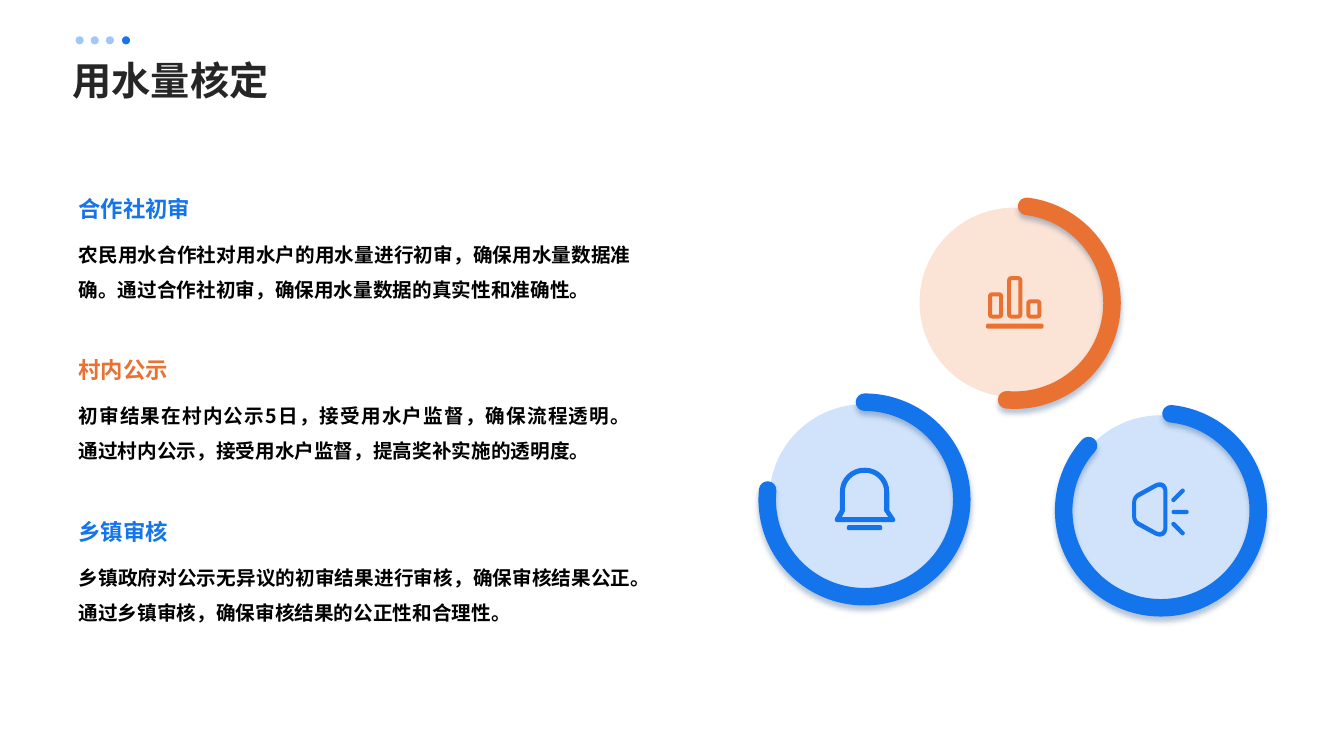
from dataclasses import dataclass
from typing import NamedTuple

from lxml import etree
from pptx import Presentation, util as u
from pptx.dml import color as c
from pptx.enum import shapes, text
from pptx.oxml import ns
from pptx.shapes import autoshape, shapetree
from pptx.slide import Slide

PX = 9144
BEND = 0.55
STEPS = 8


@dataclass(frozen=True)
class Theme:
    font: str = "Noto Sans CJK SC"
    blue: str = "1474EC"
    orange: str = "E97132"
    sky: str = "D0E3FB"
    peach: str = "FBE3D6"
    shade: str = "0A3A76"
    ink: str = "262626"
    black: str = "000000"
    title: int = 28
    head: int = 16
    body: int = 14
    ring: float = 12.5


class Node(NamedTuple):
    x: int
    y: int
    r: int = 0


Path = list[Node]


@dataclass(frozen=True)
class Item:
    top: int
    head: str
    body: str
    hue: str


@dataclass(frozen=True)
class Dial:
    x: int
    y: int
    start: float
    end: float
    hue: str
    tint: str
    icon: list[Path]


T = Theme()


def box(x: int, y: int, w: int, h: int, r: int = 0) -> Path:
    return [Node(x, y, r), Node(x + w, y, r), Node(x + w, y + h, r), Node(x, y + h, r)]


def path(*nodes: tuple[int, ...]) -> Path:
    return [Node(*node) for node in nodes]


BARS = [box(978, 321, 57, 5, 2)]
for col, top in enumerate((290, 274, 297)):
    left = 980 + 19 * col
    BARS += [box(left, top, 15, 316 - top, 4), box(left + 4, top + 4, 7, 308 - top)]

BELL = [
    path((833, 464, 24), (882, 464, 24), (882, 506), (890, 518, 5), (826, 518, 5), (833, 506)),
    path((838, 469, 19), (877, 469, 19), (877, 507), (881, 513), (835, 513), (838, 507)),
    box(840, 521, 35, 5, 2),
]

HORN = [
    path((1158, 473, 15), (1158, 538, 15), (1123, 519, 6), (1123, 492, 6)),
    path((1154, 480, 8), (1154, 531, 8), (1127, 516, 3), (1127, 495, 3)),
    box(1162, 506, 17, 4, 2),
    path((1164, 517, 2), (1176, 529, 2), (1173, 532, 2), (1161, 520, 2)),
    path((1164, 499, 2), (1176, 487, 2), (1173, 484, 2), (1161, 496, 2)),
]

ITEMS = [
    Item(183, "合作社初审", "农民用水合作社对用水户的用水量进行初审，确保用水量数据准确。通过合作社初审，确保用水量数据的真实性和准确性。", T.blue),
    Item(343, "村内公示", "初审结果在村内公示5日，接受用水户监督，确保流程透明。\v通过村内公示，接受用水户监督，提高奖补实施的透明度。", T.orange),
    Item(504, "乡镇审核", "乡镇政府对公示无异议的初审结果进行审核，确保审核结果公正。通过乡镇审核，确保审核结果的公正性和合理性。", T.blue),
]

DIALS = [
    Dial(912, 206, 277, 94.8, T.orange, T.peach, BARS),
    Dial(763, 401, 270, 185.57, T.blue, T.sky, BELL),
    Dial(1057, 412, 275.93, 221.91, T.blue, T.sky, HORN),
]


def write(page: Slide, x: int, y: int, w: int, h: int, words: str, size: int, hue: str,
          lead: float, anchor: text.MSO_ANCHOR) -> None:
    frame = page.shapes.add_textbox(x * PX, y * PX, w * PX, h * PX).text_frame
    frame.word_wrap = True
    frame.margin_left = frame.margin_right = frame.margin_top = frame.margin_bottom = 0
    frame.vertical_anchor = anchor
    para = frame.paragraphs[0]
    para.text = words
    para.alignment = text.PP_ALIGN.JUSTIFY
    para.line_spacing = lead
    font = para.font
    font.size, font.bold, font.name = u.Pt(size), True, T.font
    font.color.rgb = c.RGBColor.from_string(hue)
    base = para._p.pPr.find(ns.qn("a:defRPr"))
    etree.SubElement(base, ns.qn("a:ea"), typeface=T.font)


def paint(shape: autoshape.Shape, hue: str) -> None:
    shape.shadow.inherit = False
    shape.fill.solid()
    shape.fill.fore_color.rgb = c.RGBColor.from_string(hue)
    shape.line.fill.background()


def disc(tree: shapetree._BaseGroupShapes, x: int, y: int, size: int, hue: str) -> autoshape.Shape:
    shape = tree.add_shape(shapes.MSO_SHAPE.OVAL, x * PX, y * PX, size * PX, size * PX)
    paint(shape, hue)
    return shape


def fade(tint: etree._Element, share: int) -> None:
    etree.SubElement(tint, ns.qn("a:alpha"), val=str(share * 1000))


def ring(page: Slide, dial: Dial) -> None:
    arc = page.shapes.add_shape(shapes.MSO_SHAPE.ARC, (dial.x - 2) * PX, (dial.y - 2) * PX, 193 * PX, 193 * PX)
    arc.adjustments[0] = dial.start * 0.6
    arc.adjustments[1] = dial.end * 0.6
    arc.fill.background()
    arc.line.width = u.Pt(T.ring)
    arc.line.color.rgb = c.RGBColor.from_string(dial.hue)
    arc.shadow.inherit = False
    props = arc._element.spPr
    props.find(ns.qn("a:ln")).set("cap", "rnd")
    cast = etree.SubElement(props.find(ns.qn("a:effectLst")), ns.qn("a:outerShdw"), blurRad=str(u.Pt(4)),
                            dist=str(u.Pt(3)), dir="5400000", algn="t", rotWithShape="0")
    fade(etree.SubElement(cast, ns.qn("a:srgbClr"), val=T.shade), 30)


def trace(nodes: Path) -> list[tuple[float, float]]:
    dots = []
    for i, node in enumerate(nodes):
        if not node.r:
            dots.append((node.x * PX, node.y * PX))
            continue
        tip = complex(node.x, node.y)
        ends = []
        for near in (nodes[i - 1], nodes[(i + 1) % len(nodes)]):
            way = complex(near.x, near.y) - tip
            ends.append(tip + way / abs(way) * node.r)
        a, d = ends
        b, e = a + (tip - a) * BEND, d + (tip - d) * BEND
        for k in range(STEPS + 1):
            t = k / STEPS
            dot = a * (1 - t) ** 3 + 3 * b * t * (1 - t) ** 2 + 3 * e * t * t * (1 - t) + d * t ** 3
            dots.append((dot.real * PX, dot.imag * PX))
    return dots


def sketch(page: Slide, icon: list[Path], hue: str) -> None:
    rims = [trace(nodes) for nodes in icon]
    pen = page.shapes.build_freeform(*rims[0][0], scale=1.0)
    for i, rim in enumerate(rims):
        if i:
            pen.move_to(*rim[0])
        pen.add_line_segments(rim[1:], close=True)
    paint(pen.convert_to_shape(), hue)


def main() -> None:
    deck = Presentation()
    deck.slide_width, deck.slide_height = 1333 * PX, 750 * PX
    page = deck.slides.add_slide(deck.slide_layouts[6])
    for item in ITEMS:
        write(page, 78, item.top, 548, 37, item.head, T.head, item.hue, 1.5, text.MSO_ANCHOR.BOTTOM)
        write(page, 78, item.top + 46, 548, 96, item.body, T.body, T.black, 1.5, text.MSO_ANCHOR.TOP)
    for dial in DIALS:
        disc(page.shapes, dial.x, dial.y, 188, dial.tint)
        ring(page, dial)
        sketch(page, dial.icon, dial.hue)
    write(page, 72, 51, 1188, 51, "用水量核定", T.title, T.ink, 1.1, text.MSO_ANCHOR.MIDDLE)
    row = page.shapes.add_group_shape()
    for i in reversed(range(4)):
        dot = disc(row.shapes, 75 + 46 * i // 3, 36, 8, T.blue)
        if i < 3:
            fade(dot._element.spPr.find(ns.qn("a:solidFill"))[0], 40)
    deck.save("out.pptx")


if __name__ == "__main__":
    main()
